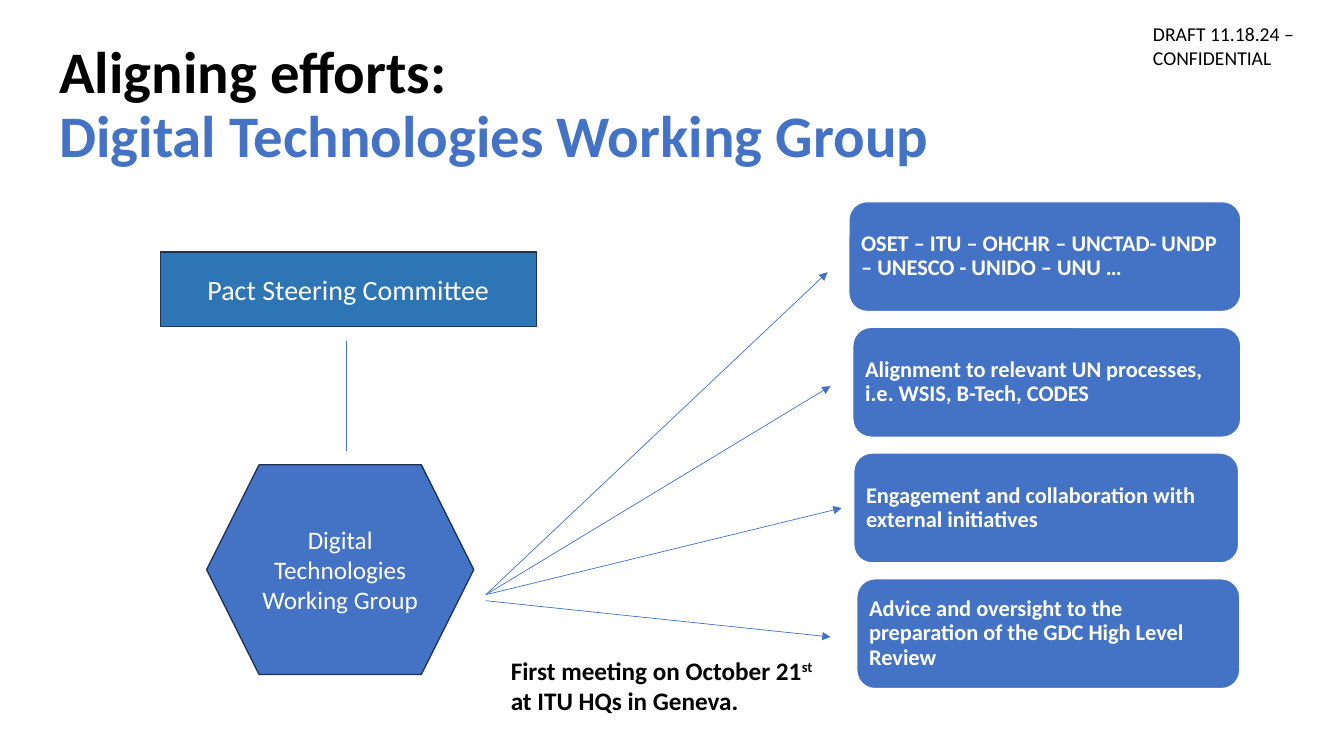
from lxml import etree
from pptx import Presentation
from pptx.dml.color import RGBColor
from pptx.enum.shapes import MSO_CONNECTOR, MSO_SHAPE
from pptx.enum.text import MSO_ANCHOR, PP_ALIGN
from pptx.oxml.ns import qn
from pptx.util import Pt

RECT = MSO_SHAPE.RECTANGLE
ROUND = MSO_SHAPE.ROUNDED_RECTANGLE
HEXAGON = MSO_SHAPE.HEXAGON
STRAIGHT = MSO_CONNECTOR.STRAIGHT
LEFT, CENTER = PP_ALIGN.LEFT, PP_ALIGN.CENTER
TOP, MIDDLE = MSO_ANCHOR.TOP, MSO_ANCHOR.MIDDLE

BLUE, STEEL, NAVY = "4472C4", "2E75B6", "1E3256"
WHITE, BLACK = "FFFFFF", "000000"

CARDS = [  # left, width, text
    (606.3, 280.1, "OSET – ITU – OHCHR – UNCTAD- UNDP – UNESCO - UNIDO – UNU …"),
    (609.1, 277.2, "Alignment to relevant UN processes, i.e. WSIS, B-Tech, CODES"),
    (609.8, 275, "Engagement and collaboration with external initiatives"),
    (612, 273.6, "Advice and oversight to the preparation of the GDC High Level Review"),
]
CARD_TOP, CARD_STEP, CARD_HEIGHT = 144, 89.8, 78.5

ARROWS = [  # start y, end x, end y
    (424.8, 591.1, 194.4),
    (424.8, 593.3, 275.8),
    (424.8, 601.2, 362.9),
    (429.1, 593.3, 455),
]
ARROW_LEFT = 347


def color(code):
    return RGBColor.from_string(code)


def write(frame, paras, size=18, ink=BLACK, bold=False, align=LEFT,
          anchor=TOP, spacing=None, inset=None):
    """Fill a frame; each paragraph is a list of (text, ink, baseline) runs,
    where ink and baseline may be left out."""
    frame.word_wrap = True
    frame.vertical_anchor = anchor
    if inset is not None:
        frame.margin_left = frame.margin_right = Pt(inset)
        frame.margin_top = frame.margin_bottom = Pt(inset)
    for i, runs in enumerate(paras):
        para = frame.add_paragraph() if i else frame.paragraphs[0]
        para.alignment = align
        if spacing:
            para.line_spacing = spacing
        for text, *extra in runs:
            run = para.add_run()
            run.text = text
            run.font.name = "Calibri"
            run.font.size = Pt(size)
            run.font.bold = bold
            run.font.color.rgb = color((extra and extra[0]) or ink)
            if len(extra) > 1:
                run.font._element.set("baseline", str(extra[1] * 1000))


def label(slide, left, top, width, height, paras, **style):
    box = slide.shapes.add_textbox(Pt(left), Pt(top), Pt(width), Pt(height))
    write(box.text_frame, paras, **style)


def block(slide, kind, left, top, width, height, fill, edge, paras, **style):
    shape = slide.shapes.add_shape(kind, Pt(left), Pt(top), Pt(width), Pt(height))
    shape.shadow.inherit = False
    shape.fill.solid()
    shape.fill.fore_color.rgb = color(fill)
    shape.line.color.rgb = color(edge)
    shape.line.width = Pt(1)
    write(shape.text_frame, paras, ink=WHITE, anchor=MIDDLE, **style)


def link(slide, x1, y1, x2, y2, arrow=False):
    line = slide.shapes.add_connector(STRAIGHT, Pt(x1), Pt(y1), Pt(x2), Pt(y2))
    line.line.color.rgb = color(BLUE)
    line.line.width = Pt(0.5)
    if arrow:
        etree.SubElement(line.line._get_or_add_ln(), qn("a:tailEnd"), type="triangle")
    etree.SubElement(line._element.spPr, qn("a:effectLst"))


def main():
    deck = Presentation()
    deck.slide_width, deck.slide_height = Pt(960), Pt(540)
    slide = deck.slides.add_slide(deck.slide_layouts[6])

    label(slide, 35.3, 23.8, 828, 104.4,
          [[("Aligning efforts:",)], [("Digital Technologies Working Group", BLUE)]],
          size=42, bold=True, anchor=MIDDLE, spacing=0.9)
    label(slide, 816.5, 12.2, 140, 58.3,
          [[("DRAFT 11.18.24 –",)], [("CONFIDENTIAL",)]], size=14)

    for i, (left, width, text) in enumerate(CARDS):
        block(slide, ROUND, left, CARD_TOP + i * CARD_STEP, width, CARD_HEIGHT,
              BLUE, WHITE, [[(text,)]], size=16, bold=True, spacing=0.9, inset=5)

    block(slide, RECT, 114.5, 180, 268.6, 53.3, STEEL, NAVY,
          [[("Pact Steering Committee",)]], size=20, align=CENTER)
    link(slide, 247.7, 243.4, 247.7, 321.8)
    block(slide, HEXAGON, 147.6, 332, 190.8, 149.8, BLUE, NAVY,
          [[("Digital Technologies",)], [("Working Group",)]], align=CENTER)

    for start, x, y in ARROWS:
        link(slide, ARROW_LEFT, start, x, y, arrow=True)

    label(slide, 357.8, 464.4, 233.3, 51.1,
          [[("First meeting on October 21",), ("st", BLACK, 30),
            (" at ITU HQs in Geneva.",)]], bold=True)

    deck.save("out.pptx")


if __name__ == "__main__":
    main()
